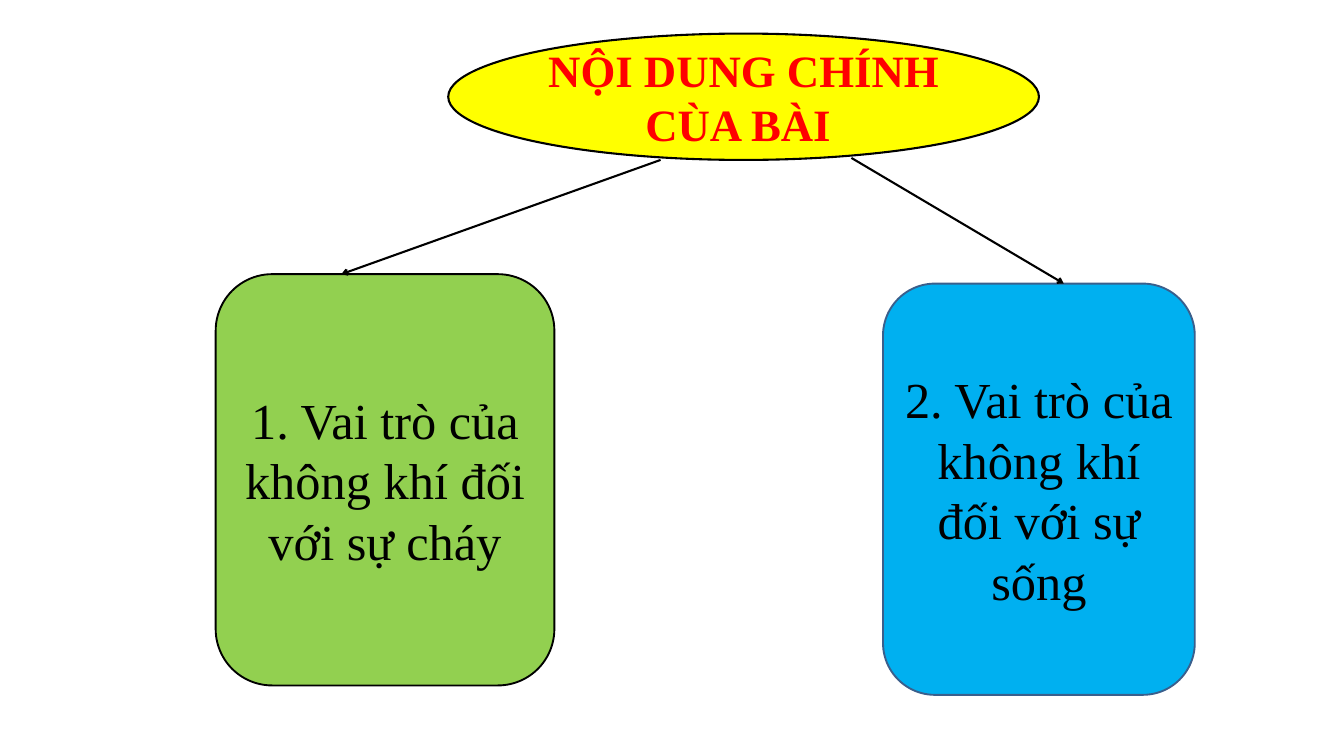
"""Build a slide that splits the lesson's main content into two topics."""
from dataclasses import dataclass

from lxml.etree import SubElement
from pptx import Presentation
from pptx.dml.color import RGBColor
from pptx.enum.shapes import MSO_CONNECTOR, MSO_SHAPE
from pptx.enum.text import MSO_ANCHOR, PP_ALIGN
from pptx.oxml.ns import qn
from pptx.util import Pt


@dataclass(frozen=True)
class Theme:
    font: str = "Times New Roman"
    black: str = "000000"
    red: str = "FF0000"
    yellow: str = "FFFF00"
    green: str = "92D050"
    blue: str = "00B0F0"
    navy: str = "3A5F8C"
    head: int = 48
    body: int = 54
    bold: float = 2.25
    thin: float = 2


theme = Theme()
SCALE = 9144


def px(*sizes):
    return [size * SCALE for size in sizes]


deck = Presentation()
deck.slide_width, deck.slide_height = px(2000, 1125)
slide = deck.slides.add_slide(deck.slide_layouts[6])

nodes = [
    (MSO_SHAPE.OVAL, (667, 50, 879, 188), theme.yellow, theme.black, theme.bold,
     "NỘI DUNG CHÍNH CÙA BÀI ", theme.head, theme.red, True),
    (MSO_SHAPE.ROUNDED_RECTANGLE, (321, 408, 504, 612), theme.green, theme.black, theme.thin,
     "1. Vai trò của không khí đối với sự cháy", theme.body, theme.black, False),
    (MSO_SHAPE.ROUNDED_RECTANGLE, (1314, 422, 464, 612), theme.blue, theme.navy, theme.thin,
     "2. Vai trò của không khí đối với sự sống", theme.body, theme.black, False),
]
for kind, box, fill, edge, width, text, size, ink, bold in nodes:
    node = slide.shapes.add_shape(kind, *px(*box))
    node.shadow.inherit = False
    node.fill.solid()
    node.fill.fore_color.rgb = RGBColor.from_string(fill)
    node.line.color.rgb = RGBColor.from_string(edge)
    node.line.width = Pt(width)
    frame = node.text_frame
    frame.text = text
    frame.word_wrap = True
    frame.vertical_anchor = MSO_ANCHOR.MIDDLE
    para = frame.paragraphs[0]
    para.alignment = PP_ALIGN.CENTER
    font = para.runs[0].font
    font.name = theme.font
    font.size = Pt(size)
    font.bold = bold
    font.color.rgb = RGBColor.from_string(ink)

for ends in [(983, 238, 508, 408), (1267, 235, 1583, 422)]:
    link = slide.shapes.add_connector(MSO_CONNECTOR.STRAIGHT, *px(*ends))
    link.line.color.rgb = RGBColor.from_string(theme.black)
    link.line.width = Pt(theme.bold)
    props = link._element.spPr
    SubElement(props.find(qn("a:ln")), qn("a:tailEnd"), type="arrow")
    SubElement(props, qn("a:effectLst"))

deck.save("out.pptx")
